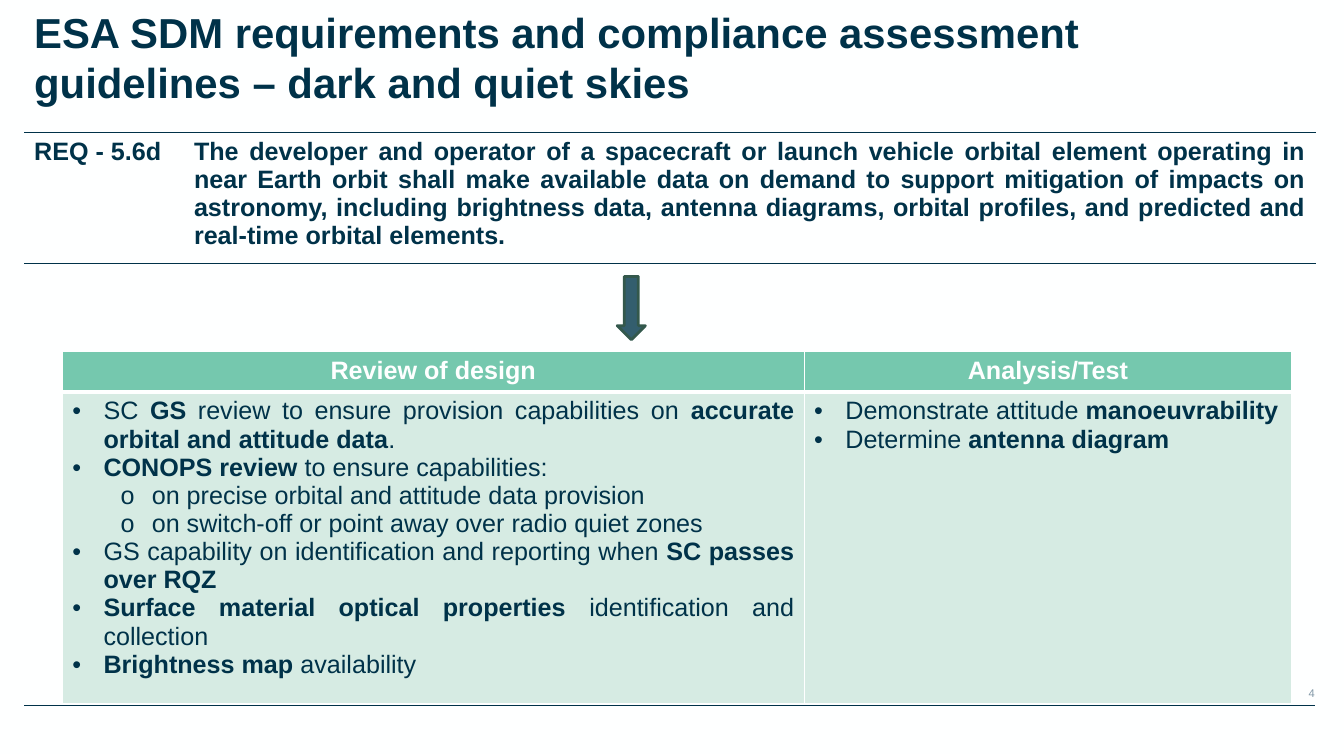
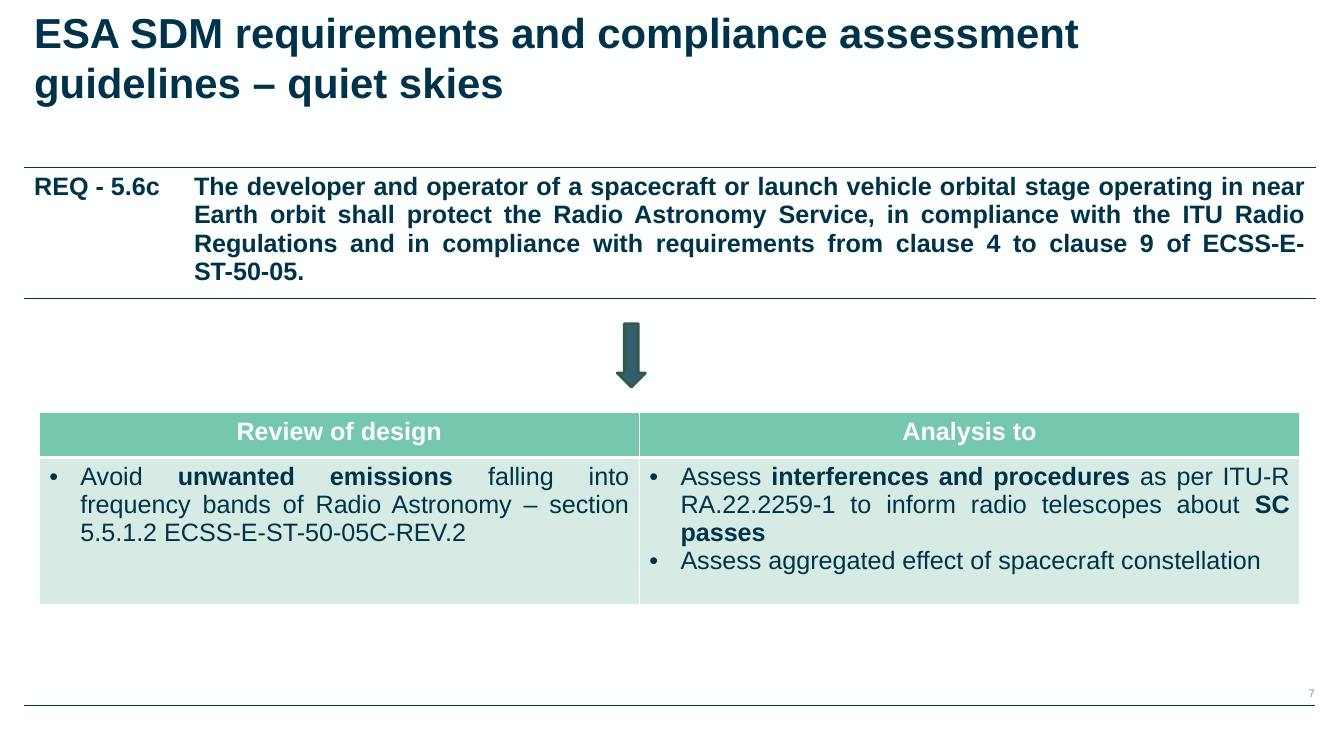
"""Build two slides that pair a space debris requirement with its compliance checks."""
from dataclasses import dataclass

from lxml.etree import SubElement
from pptx import Presentation
from pptx.dml.color import RGBColor
from pptx.enum.shapes import MSO_CONNECTOR, MSO_SHAPE
from pptx.enum.text import MSO_ANCHOR, MSO_AUTO_SIZE, PP_ALIGN
from pptx.oxml import parse_xml
from pptx.oxml.ns import nsdecls, qn
from pptx.util import Inches, Pt


@dataclass(frozen=True)
class Theme:
    font: str = "Arial"
    title_size: int = 30
    text_size: int = 18
    number_size: int = 8
    paper: str = "FEFFFF"
    ink: str = "003249"
    number: str = "8197A6"
    arrow: str = "335E6E"
    arrow_edge: str = "33584C"
    header: str = "75C8AE"
    body: str = "D6EBE3"


THEME = Theme()
WIDTH, HEIGHT = 13.37, 7.5
LEFT, RIGHT = 0.24, 13.08
FOOTER_Y = 7.02
REQUIREMENT_COLUMNS = (1.59, 11.26)
REQUIREMENT_HEIGHT = 1.22
ARROW_LEFT, ARROW_WIDTH, ARROW_HEIGHT = 6.14, 0.28, 0.63
HANG = 0.31
BULLETS = (("•", 0.31), ("o", 0.79))
SIDES = ("L", "R", "T", "B")
JUSTIFY, CENTER, START = PP_ALIGN.JUSTIFY, PP_ALIGN.CENTER, PP_ALIGN.LEFT

SLIDES = [
    {
        "number": "4",
        "title": "ESA SDM requirements and compliance assessment guidelines – dark and quiet skies",
        "requirement": (
            "REQ - 5.6d",
            "The developer and operator of a spacecraft or launch vehicle orbital element "
            "operating in near Earth orbit shall make available data on demand to support "
            "mitigation of impacts on astronomy, including brightness data, antenna diagrams, "
            "orbital profiles, and predicted and real-time orbital elements.",
        ),
        "requirement_top": 1.32,
        "arrow_top": 2.75,
        "checks_at": (0.62, 3.5),
        "check_columns": (7.38, 4.85),
        "check_rows": (0.39, 2.9),
        "checks": [
            ("Review of design", JUSTIFY, [
                (0, "SC **GS** review to ensure provision capabilities on "
                    "**accurate orbital and attitude data**."),
                (0, "**CONOPS review **to ensure capabilities:"),
                (1, "on precise orbital and attitude data provision"),
                (1, "on switch-off or point away over radio quiet zones"),
                (0, "GS capability on identification and reporting when **SC passes over RQZ**"),
                (0, "**Surface material optical properties **identification and collection"),
                (0, "**Brightness map **availability"),
            ]),
            ("Analysis/Test", START, [
                (0, "Demonstrate attitude **manoeuvrability**"),
                (0, "Determine **antenna diagram**"),
            ]),
        ],
    },
    {
        "number": "7",
        "title": "ESA SDM requirements and compliance assessment guidelines – quiet skies",
        "requirement": (
            "REQ - 5.6c",
            "The developer and operator of a spacecraft or launch vehicle orbital stage "
            "operating in near Earth orbit shall protect the Radio Astronomy Service, in "
            "compliance with the ITU Radio Regulations and in compliance with requirements "
            "from clause 4 to clause 9 of ECSS-E-ST-50-05.",
        ),
        "requirement_top": 1.67,
        "arrow_top": 3.22,
        "checks_at": (0.39, 4.1),
        "check_columns": (5.97, 6.57),
        "check_rows": (0.45, 1.46),
        "checks": [
            ("Review of design", JUSTIFY, [
                (0, "Avoid **unwanted emissions **falling into frequency bands of Radio "
                    "Astronomy – section 5.5.1.2 ECSS-E-ST-50-05C-REV.2"),
            ]),
            ("Analysis to", JUSTIFY, [
                (0, "Assess **interferences and procedures **as per ITU-R RA.22.2259-1 to "
                    "inform radio telescopes about **SC passes**"),
                (0, "Assess aggregated effect of spacecraft constellation"),
            ]),
        ],
    },
]


def color(value):
    return RGBColor.from_string(value)


def style(paragraph, size, ink, bold=None, align=START):
    paragraph.alignment = align
    font = paragraph.font
    font.name, font.size, font.bold = THEME.font, Pt(size), bold
    font.color.rgb = color(ink)


def write(paragraph, text, ink=THEME.ink, bold=None, align=START):
    for index, part in enumerate(text.split("**")):
        if part:
            run = paragraph.add_run()
            run.text = part
            if bold is None:
                run.font.bold = index % 2 == 1
    style(paragraph, THEME.text_size, ink, bold, align)


def add_bullet(paragraph, level):
    mark, indent = BULLETS[level]
    properties = paragraph._p.get_or_add_pPr()
    properties.set("marL", str(Inches(indent)))
    properties.set("indent", str(-Inches(HANG)))
    SubElement(properties, qn("a:buFont")).set("typeface", THEME.font)
    SubElement(properties, qn("a:buChar")).set("char", mark)
    paragraph.level = level


def set_borders(cell, ink, widths):
    properties = cell._tc.get_or_add_tcPr()
    for index, (side, width) in enumerate(zip(SIDES, widths)):
        paint = f'<a:solidFill><a:srgbClr val="{ink}"/></a:solidFill>' if width else "<a:noFill/>"
        properties.insert(index, parse_xml(
            f'<a:ln{side} {nsdecls("a")} w="{Pt(width)}">{paint}</a:ln{side}>'))


def add_grid(slide, left, top, columns, rows):
    table = slide.shapes.add_table(
        len(rows), len(columns), Inches(left), Inches(top),
        Inches(sum(columns)), Inches(sum(rows))).table
    table.first_row = table.horz_banding = False
    for column, width in zip(table.columns, columns):
        column.width = Inches(width)
    for row, height in zip(table.rows, rows):
        row.height = Inches(height)
    return table


def add_requirement(slide, top, requirement):
    table = add_grid(slide, LEFT, top, REQUIREMENT_COLUMNS, (REQUIREMENT_HEIGHT,))
    for cell, text, align in zip(table.rows[0].cells, requirement, (START, JUSTIFY)):
        cell.fill.background()
        set_borders(cell, THEME.ink, (0, 0, 1, 1))
        write(cell.text_frame.paragraphs[0], text, bold=True, align=align)


def add_checks(slide, at, columns, rows, checks):
    table = add_grid(slide, *at, columns, rows)
    for index, (heading, align, items) in enumerate(checks):
        header, body = table.cell(0, index), table.cell(1, index)
        for cell, fill, widths in ((header, THEME.header, (1, 1, 1, 3)),
                                   (body, THEME.body, (1, 1, 3, 1))):
            cell.fill.solid()
            cell.fill.fore_color.rgb = color(fill)
            set_borders(cell, THEME.paper, widths)
        write(header.text_frame.paragraphs[0], heading, THEME.paper, True, CENTER)
        for position, (level, text) in enumerate(items):
            frame = body.text_frame
            paragraph = frame.add_paragraph() if position else frame.paragraphs[0]
            add_bullet(paragraph, level)
            write(paragraph, text, align=align)


def add_arrow(slide, top):
    arrow = slide.shapes.add_shape(
        MSO_SHAPE.DOWN_ARROW, Inches(ARROW_LEFT), Inches(top),
        Inches(ARROW_WIDTH), Inches(ARROW_HEIGHT))
    arrow.shadow.inherit = False
    arrow.fill.solid()
    arrow.fill.fore_color.rgb = color(THEME.arrow)
    arrow.line.color.rgb = color(THEME.arrow_edge)
    arrow.line.width = Pt(2)


def add_footer(slide, number):
    rule = slide.shapes.add_connector(
        MSO_CONNECTOR.STRAIGHT, Inches(LEFT), Inches(FOOTER_Y), Inches(RIGHT), Inches(FOOTER_Y))
    rule.line.color.rgb = color(THEME.ink)
    rule.line.width = Pt(0.75)
    SubElement(rule._element.spPr, qn("a:effectLst"))
    page = slide.shapes.add_textbox(
        Inches(RIGHT - 1), Inches(FOOTER_Y - 0.24), Inches(1), Inches(0.24)).text_frame
    page.word_wrap = True
    page.margin_right = 0
    page.text = number
    style(page.paragraphs[0], THEME.number_size, THEME.number, align=PP_ALIGN.RIGHT)


def set_title(slide, text):
    title = slide.shapes.title
    title.left, title.top = Inches(LEFT), Inches(0.01)
    title.width, title.height = Inches(11.06), Inches(1.11)
    frame = title.text_frame
    frame.text = text
    frame.word_wrap = True
    frame.auto_size = MSO_AUTO_SIZE.NONE
    frame.vertical_anchor = MSO_ANCHOR.MIDDLE
    style(frame.paragraphs[0], THEME.title_size, THEME.ink, True)


def main():
    deck = Presentation()
    deck.slide_width, deck.slide_height = Inches(WIDTH), Inches(HEIGHT)
    background = deck.slide_master.background.fill
    background.solid()
    background.fore_color.rgb = color(THEME.paper)
    for content in SLIDES:
        slide = deck.slides.add_slide(deck.slide_layouts.get_by_name("Title Only"))
        add_footer(slide, content["number"])
        set_title(slide, content["title"])
        add_requirement(slide, content["requirement_top"], content["requirement"])
        add_arrow(slide, content["arrow_top"])
        add_checks(slide, content["checks_at"], content["check_columns"],
                   content["check_rows"], content["checks"])
    deck.save("out.pptx")


if __name__ == "__main__":
    main()
